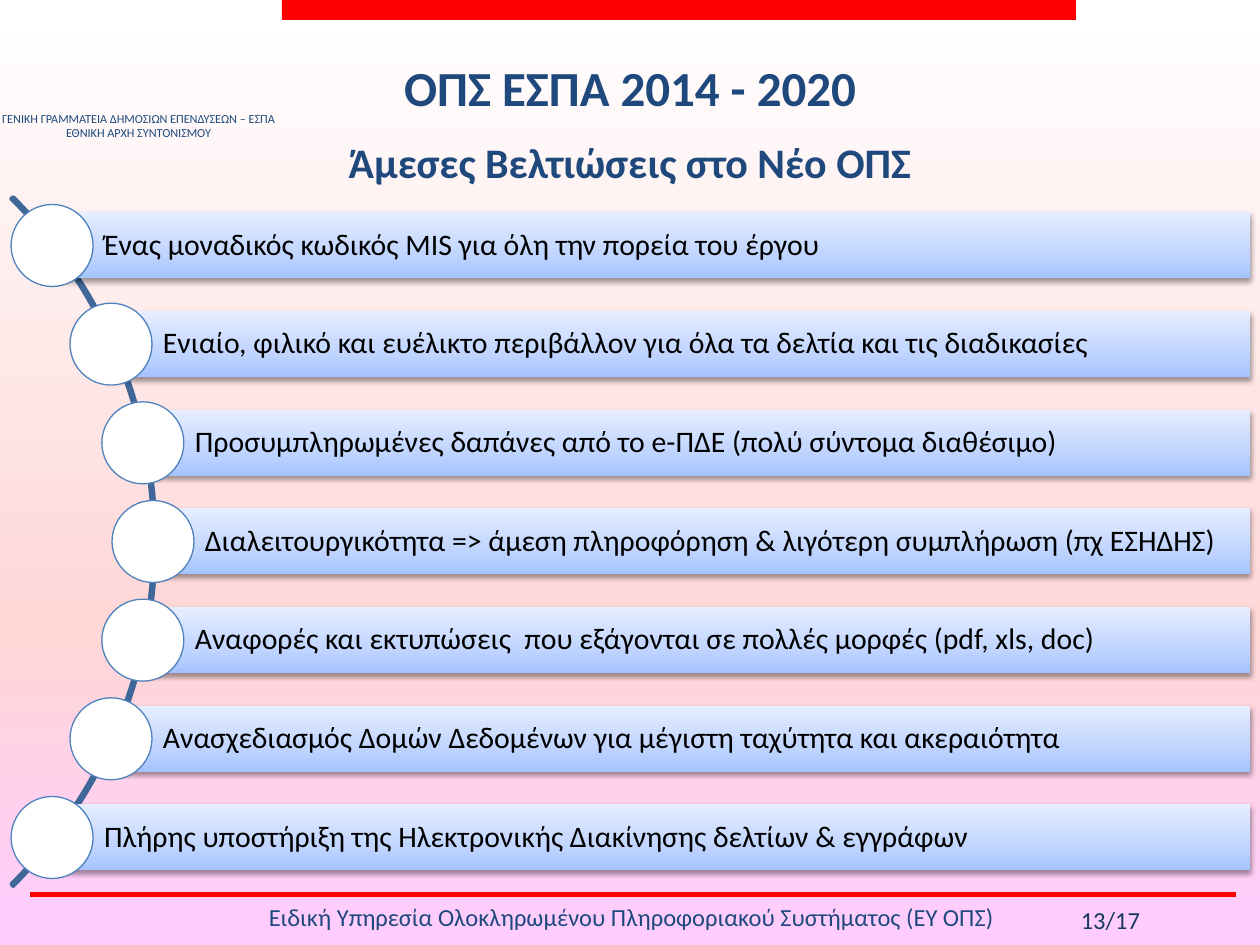
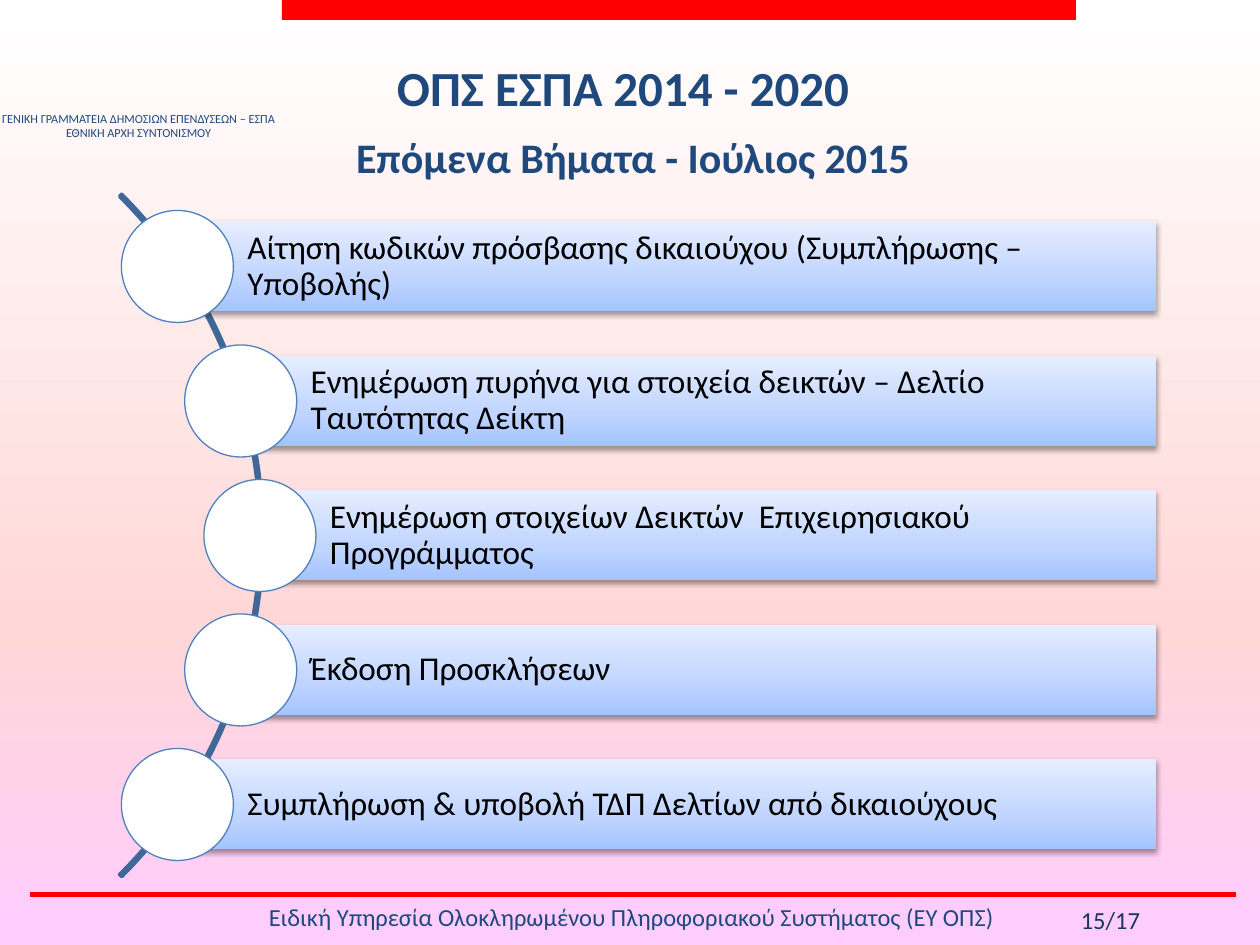
from math import sqrt

from lxml.etree import SubElement
from pptx import Presentation
from pptx.dml.color import RGBColor
from pptx.enum.shapes import MSO_SHAPE as Form
from pptx.enum.text import MSO_ANCHOR as Anchor, MSO_AUTO_SIZE as Fit, PP_ALIGN as Align
from pptx.oxml.ns import qn
from pptx.util import Emu, Pt

SCALE = 914400 / 126
FONT = "Calibri"
INK = {
    "red": "FF0000", "navy": "1F497D", "deep": "17375E", "arc": "3F6797",
    "edge": "4F81BD", "white": "FFFFFF", "black": "000000",
    "rose": "FFD7D7", "pink": "FFCCFF",
    "low": "A4C4FF", "mid": "BFD4FF", "high": "E6EEFF",
}
SKY = [(0, "white"), (67, "rose"), (100, "pink")]
BAR = [(0, "low"), (35, "mid"), (100, "high")]
OFFICE = "Ειδική Υπηρεσία Ολοκληρωμένου Πληροφοριακού Συστήματος (ΕΥ ΟΠΣ)"
AGENCY = ["ΓΕΝΙΚΗ ΓΡΑΜΜΑΤΕΙΑ ΔΗΜΟΣΙΩΝ ΕΠΕΝΔΥΣΕΩΝ – ΕΣΠΑ", "ΕΘΝΙΚΗ ΑΡΧΗ ΣΥΝΤΟΝΙΣΜΟΥ"]
HEAD = "ΟΠΣ ΕΣΠΑ 2014 - 2020"

GAINS = [
    "Ένας μοναδικός κωδικός MIS για όλη την πορεία του έργου",
    "Ενιαίο, φιλικό και ευέλικτο περιβάλλον για όλα τα δελτία και τις διαδικασίες",
    "Προσυμπληρωμένες δαπάνες από το e-ΠΔΕ (πολύ σύντομα διαθέσιμο)",
    "Διαλειτουργικότητα => άμεση πληροφόρηση & λιγότερη συμπλήρωση (πχ ΕΣΗΔΗΣ)",
    "Αναφορές και εκτυπώσεις  που εξάγονται σε πολλές μορφές (pdf, xls, doc)",
    "Ανασχεδιασμός Δομών Δεδομένων για μέγιστη ταχύτητα και ακεραιότητα",
    "Πλήρης υποστήριξη της Ηλεκτρονικής Διακίνησης δελτίων & εγγράφων",
]
STEPS = [
    "Αίτηση κωδικών πρόσβασης δικαιούχου (Συμπλήρωσης – Υποβολής)",
    "Ενημέρωση πυρήνα για στοιχεία δεικτών – Δελτίο Ταυτότητας Δείκτη",
    "Ενημέρωση στοιχείων Δεικτών  Επιχειρησιακού Προγράμματος",
    "Έκδοση Προσκλήσεων",
    "Συμπλήρωση & υποβολή ΤΔΠ Δελτίων από δικαιούχους",
]


def px(n):
    return Emu(round(n * SCALE))


def tint(name):
    return RGBColor.from_string(INK[name])


def blend(fill, root, stops, angle):
    fill.gradient()
    fill.gradient_angle = angle
    ramp = root.find(".//" + qn("a:gsLst"))
    for old in list(ramp):
        ramp.remove(old)
    for place, name in stops:
        stop = SubElement(ramp, qn("a:gs"), pos=str(place * 1000))
        SubElement(stop, qn("a:srgbClr"), val=INK[name])


def cast(shape):
    effects = shape._element.spPr.find(qn("a:effectLst"))
    shade = SubElement(effects, qn("a:outerShdw"), blurRad="40000", dist="20000",
                       dir="5400000", rotWithShape="0")
    color = SubElement(shade, qn("a:srgbClr"), val=INK["black"])
    SubElement(color, qn("a:alpha"), val="38000")


def draw(slide, form, box, fill=None, line=None, width=1):
    shape = slide.shapes.add_shape(form, *map(px, box))
    shape.shadow.inherit = False
    if fill:
        shape.fill.solid()
        shape.fill.fore_color.rgb = tint(fill)
    else:
        shape.fill.background()
    if line:
        shape.line.color.rgb = tint(line)
        shape.line.width = Pt(width)
    else:
        shape.line.fill.background()
    return shape


def write(frame, lines, size, color, bold=False, align=Align.CENTER,
          anchor=Anchor.TOP, pads=None, lead=None):
    frame.word_wrap = True
    frame.auto_size = Fit.NONE
    frame.vertical_anchor = anchor
    if pads:
        (frame.margin_left, frame.margin_top,
         frame.margin_right, frame.margin_bottom) = map(px, pads)
    for i, text in enumerate(lines):
        para = frame.add_paragraph() if i else frame.paragraphs[0]
        para.alignment = align
        para.space_before = Pt(0)
        if lead:
            para.line_spacing = lead
        run = para.add_run()
        run.text = text
        run.font.name = FONT
        run.font.size = Pt(size)
        run.font.bold = bold
        run.font.color.rgb = tint(color)


def label(slide, box, lines, size, color, pads=None):
    note = slide.shapes.add_textbox(*map(px, box))
    write(note.text_frame, lines, size, color, pads=pads)


def place(holder, box):
    holder.left, holder.top, holder.width, holder.height = map(px, box)
    return holder.text_frame


def frame(deck, topic, number, head_box, topic_box):
    slide = deck.slides.add_slide(deck.slide_layouts[0])
    blend(slide.background.fill, slide._element, SKY, 270)
    draw(slide, Form.RECTANGLE, (282, 0, 794, 20), "red")
    draw(slide, Form.RECTANGLE, (30, 892, 1206, 5), "red")
    label(slide, (92, 896, 1079, 43), [OFFICE], 14, "navy")
    label(slide, (0, 111, 277, 30), AGENCY, 7, "navy", (0, 0, 0, 0))
    label(slide, (1066, 905, 89, 35), [f"{number}/17"], 14, "deep", (0, 0, 0, 0))
    title, below = slide.placeholders
    write(place(title, head_box), [HEAD], 28, "navy", True, anchor=Anchor.MIDDLE)
    write(place(below, topic_box), [topic], 24, "navy", True)
    return slide


def curve(slide, items, box, span, bar, dot, inset, size):
    left, top, right, side = box
    radius = side / 2
    hub, middle = left + radius, top + radius
    arc = draw(slide, Form.BLOCK_ARC, (left, top, side, side), line="arc", width=2)
    for i, value in enumerate((189, 27, 3 / side)):
        arc.adjustments[i] = value
    for i, text in enumerate(items):
        rise = span * (i / (len(items) - 1) - 0.5)
        x, y = hub + sqrt((radius - 3) ** 2 - rise ** 2), middle + rise
        strip = draw(slide, Form.RECTANGLE, (x, y - bar / 2, right - x, bar))
        blend(strip.fill, strip._element, BAR, 90)
        cast(strip)
        write(strip.text_frame, [text], size, "black", align=Align.LEFT,
              anchor=Anchor.MIDDLE, pads=(inset, 6, 6, 6), lead=0.9)
        draw(slide, Form.OVAL, (x - dot / 2, y - dot / 2, dot, dot), "white", "edge", 0.75)


def main():
    deck = Presentation()
    deck.slide_width, deck.slide_height = px(1260), px(945)
    gains = frame(deck, "Άμεσες Βελτιώσεις στο Νέο ΟΠΣ", 13,
                  (0, 40, 1260, 93), (0, 130, 1260, 63))
    curve(gains, GAINS, (-819, 54, 1250, 975), 592, 66, 82, 52, 17)
    steps = frame(deck, "Επόμενα Βήματα - Ιούλιος 2015", 15,
                  (134, 40, 978, 93), (30, 125, 1206, 63))
    curve(steps, STEPS, (-702, 53, 1156, 965), 538, 90, 112, 70, 19)
    deck.save("out.pptx")


if __name__ == "__main__":
    main()
